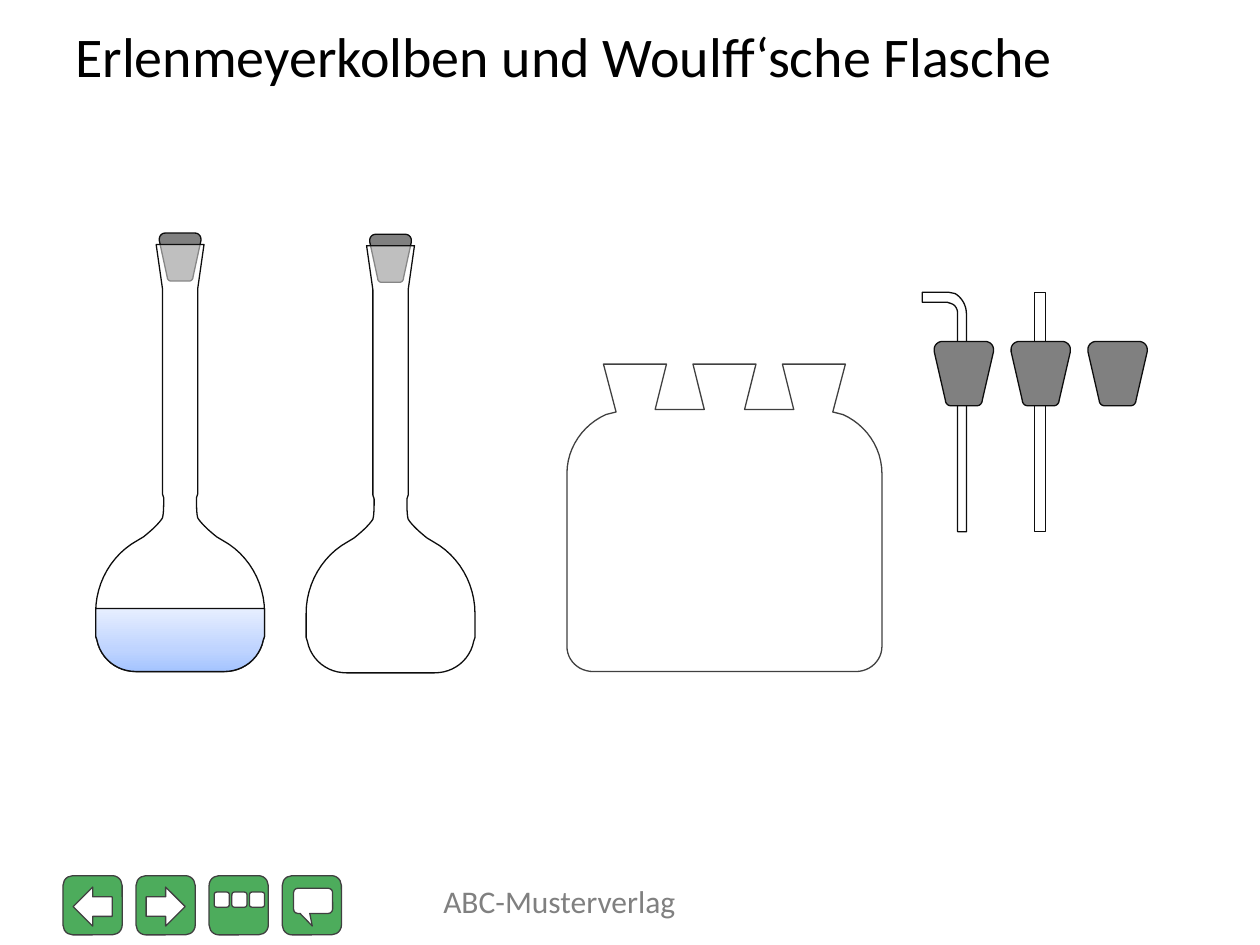
from copy import deepcopy
from dataclasses import dataclass
from typing import Optional

from lxml.etree import SubElement
from pptx import Presentation
from pptx.dml.color import RGBColor
from pptx.enum.shapes import MSO_SHAPE as Preset
from pptx.enum.text import MSO_ANCHOR as Anchor
from pptx.oxml.ns import qn
from pptx.util import Inches, Pt

WHITE = RGBColor(0xFF, 0xFF, 0xFF)
BLACK = RGBColor(0x00, 0x00, 0x00)
INK = RGBColor(0x0D, 0x0D, 0x0D)
DARK_GRAY = RGBColor(0x40, 0x40, 0x40)
GRAY = RGBColor(0x80, 0x80, 0x80)
GREEN = RGBColor(0x4D, 0xAC, 0x5C)
LIQUID_STOPS = (
    (0, RGBColor(0xA4, 0xC4, 0xFF)),
    (0.35, RGBColor(0xBF, 0xD4, 0xFF)),
    (1, RGBColor(0xE6, 0xEE, 0xFF)),
)
CURVE_STEPS = 12

STOPPER_HALF = [
    (0.36, 0), (0.44, 0, 0.5, 0.06, 0.5, 0.12), (0.5, 0.16),
    (0.31, 0.92), (0.31, 0.96, 0.27, 1, 0.23, 1),
]
FLASK_BASE = [(0.67, 3.11), (0.66, 3.14), (0.63, 3.29, 0.5, 3.39, 0.35, 3.39)]
FLASK_HALF = [
    (0.19, 0), (0.14, 0.35), (0.14, 1.98), (0.13, 2.01),
    (0.13, 2.07, 0.13, 2.13, 0.14, 2.17),
    (0.17, 2.22, 0.24, 2.28, 0.29, 2.32), (0.34, 2.35),
    (0.54, 2.46, 0.67, 2.68, 0.67, 2.92),
] + FLASK_BASE
LIQUID_HALF = [(0.67, 2.89)] + FLASK_BASE
BOTTLE_HALF = [
    (0.25, 0), (0.16, 0.36), (0.55, 0.36), (0.46, 0), (0.96, 0),
    (0.86, 0.38), (0.94, 0.4), (1.12, 0.48, 1.25, 0.66, 1.25, 0.87),
    (1.25, 2.24), (1.25, 2.35, 1.16, 2.44, 1.04, 2.44),
]
BENT_TUBE = [
    (7.32, 2.32), (7.53, 2.32), (7.58, 2.33),
    (7.63, 2.36, 7.67, 2.42, 7.67, 2.49), (7.67, 4.22), (7.6, 4.22),
    (7.6, 2.49), (7.6, 2.45, 7.58, 2.42, 7.55, 2.41), (7.52, 2.4), (7.32, 2.4),
]


@dataclass
class Stopper:
    center: float
    top: float
    width: float = 0.47
    height: float = 0.51


@dataclass
class Flask:
    center: float
    top: float
    filled: bool


@dataclass
class Symbol:
    preset: Preset
    left: float
    top: float
    width: float
    height: float
    rotation: int = 0
    adjustments: tuple = ()


def flatten(outline: list) -> list:
    points = []
    for step in outline:
        if len(step) == 2:
            points.append(step)
            continue
        start, ends = points[-1], (step[0:2], step[2:4], step[4:6])
        for index in range(1, CURVE_STEPS + 1):
            t = index / CURVE_STEPS
            weights = ((1 - t) ** 3, 3 * t * (1 - t) ** 2, 3 * t * t * (1 - t), t**3)
            points.append(tuple(
                sum(w * point[axis] for w, point in zip(weights, (start, *ends)))
                for axis in (0, 1)
            ))
    return points


def mirrored(half: list, center: float, top: float, width=1.0, height=1.0) -> list:
    right = flatten(half)
    left = [(-x, y) for x, y in reversed(right)]
    return [(center + x * width, top + y * height) for x, y in right + left]


def style(shape, fill: RGBColor, line: RGBColor, alpha: Optional[int] = None) -> None:
    shape.shadow.inherit = False
    shape.fill.solid()
    shape.fill.fore_color.rgb = fill
    shape.line.color.rgb = line
    shape.line.width = Pt(0.75)
    if alpha is not None:
        color = shape._element.spPr.find(qn("a:solidFill"))[0]
        SubElement(color, qn("a:alpha")).set("val", str(alpha * 1000))


def add_outline(shapes, points: list, fill=WHITE, line=INK, alpha=None):
    (first, *rest) = [(Inches(x), Inches(y)) for x, y in points]
    builder = shapes.build_freeform(*first)
    builder.add_line_segments(rest, close=True)
    shape = builder.convert_to_shape()
    style(shape, fill, line, alpha)
    return shape


def add_preset(shapes, symbol: Symbol, fill: RGBColor, line: RGBColor) -> None:
    box = (symbol.left, symbol.top, symbol.width, symbol.height)
    shape = shapes.add_shape(symbol.preset, *map(Inches, box))
    shape.rotation = symbol.rotation
    for index, value in enumerate(symbol.adjustments):
        shape.adjustments[index] = value
    style(shape, fill, line)


def add_stopper(shapes, stopper: Stopper) -> None:
    points = mirrored(
        STOPPER_HALF, stopper.center, stopper.top, stopper.width, stopper.height
    )
    add_outline(shapes, points, GRAY)


def fill_with_liquid(shape) -> None:
    shape.fill.gradient()
    shape.fill.gradient_angle = 90
    stop_list = shape._element.spPr.find(qn("a:gradFill")).find(qn("a:gsLst"))
    stop_list.insert(1, deepcopy(stop_list[0]))
    for stop, (position, color) in zip(shape.fill.gradient_stops, LIQUID_STOPS):
        stop.position = position
        stop.color.rgb = color


def add_flask(shapes, flask: Flask) -> None:
    group = shapes.add_group_shape().shapes
    add_stopper(group, Stopper(flask.center, flask.top - 0.09, 0.33, 0.38))
    add_outline(group, mirrored(FLASK_HALF, flask.center, flask.top), alpha=50)
    if flask.filled:
        liquid = mirrored(LIQUID_HALF, flask.center, flask.top)
        fill_with_liquid(add_outline(group, liquid))


def add_text(shapes, text: str, box: tuple, size: int, color: RGBColor, anchor) -> None:
    frame = shapes.add_textbox(*map(Inches, box)).text_frame
    frame.word_wrap = True
    frame.vertical_anchor = anchor
    paragraph = frame.paragraphs[0]
    paragraph.text = text
    paragraph.font.name = "Calibri"
    paragraph.font.size = Pt(size)
    paragraph.font.color.rgb = color


def add_navigation(shapes) -> None:
    arrow = (Preset.RIGHT_ARROW, 0.08, 0.09, 0.31, 0.31)
    buttons = [
        [Symbol(*arrow, rotation=180)],
        [Symbol(*arrow)],
        [Symbol(Preset.ROUNDED_RECTANGLE, 0.04 + 0.14 * i, 0.13, 0.12, 0.12)
         for i in range(3)],
        [Symbol(Preset.ROUNDED_RECTANGULAR_CALLOUT, 0.09, 0.1, 0.31, 0.2,
                adjustments=(-0.02, 1, 0.17))],
    ]
    for index, symbols in enumerate(buttons):
        left, top = 0.5 + 0.58 * index, 6.95
        button = Symbol(Preset.ROUNDED_RECTANGLE, left, top, 0.47, 0.47)
        add_preset(shapes, button, GREEN, DARK_GRAY)
        for symbol in symbols:
            symbol.left += left
            symbol.top += top
            add_preset(shapes, symbol, WHITE, DARK_GRAY)


def main() -> None:
    presentation = Presentation()
    presentation.slide_width, presentation.slide_height = Inches(10), Inches(7.5)
    shapes = presentation.slides.add_slide(presentation.slide_layouts[6]).shapes
    add_navigation(shapes)
    add_text(shapes, "Erlenmeyerkolben und Woulff‘sche Flasche",
             (0.5, 0.14, 9, 0.59), 32, BLACK, Anchor.MIDDLE)
    for flask in (Flask(1.43, 1.94, True), Flask(3.1, 1.95, False)):
        add_flask(shapes, flask)

    bent_tube = shapes.add_group_shape().shapes
    add_outline(bent_tube, flatten(BENT_TUBE))
    add_stopper(bent_tube, Stopper(7.65, 2.71))
    straight_tube = shapes.add_group_shape().shapes
    add_preset(straight_tube, Symbol(Preset.RECTANGLE, 8.21, 2.32, 0.09, 1.9), WHITE, INK)
    add_stopper(straight_tube, Stopper(8.26, 2.71))
    add_stopper(shapes, Stopper(8.87, 2.71))

    add_outline(shapes, mirrored(BOTTLE_HALF, 5.75, 2.89), line=DARK_GRAY, alpha=50)
    add_text(shapes, "ABC-Musterverlag", (3.42, 6.95, 3.17, 0.4), 18, GRAY, Anchor.TOP)
    presentation.save("out.pptx")


if __name__ == "__main__":
    main()
